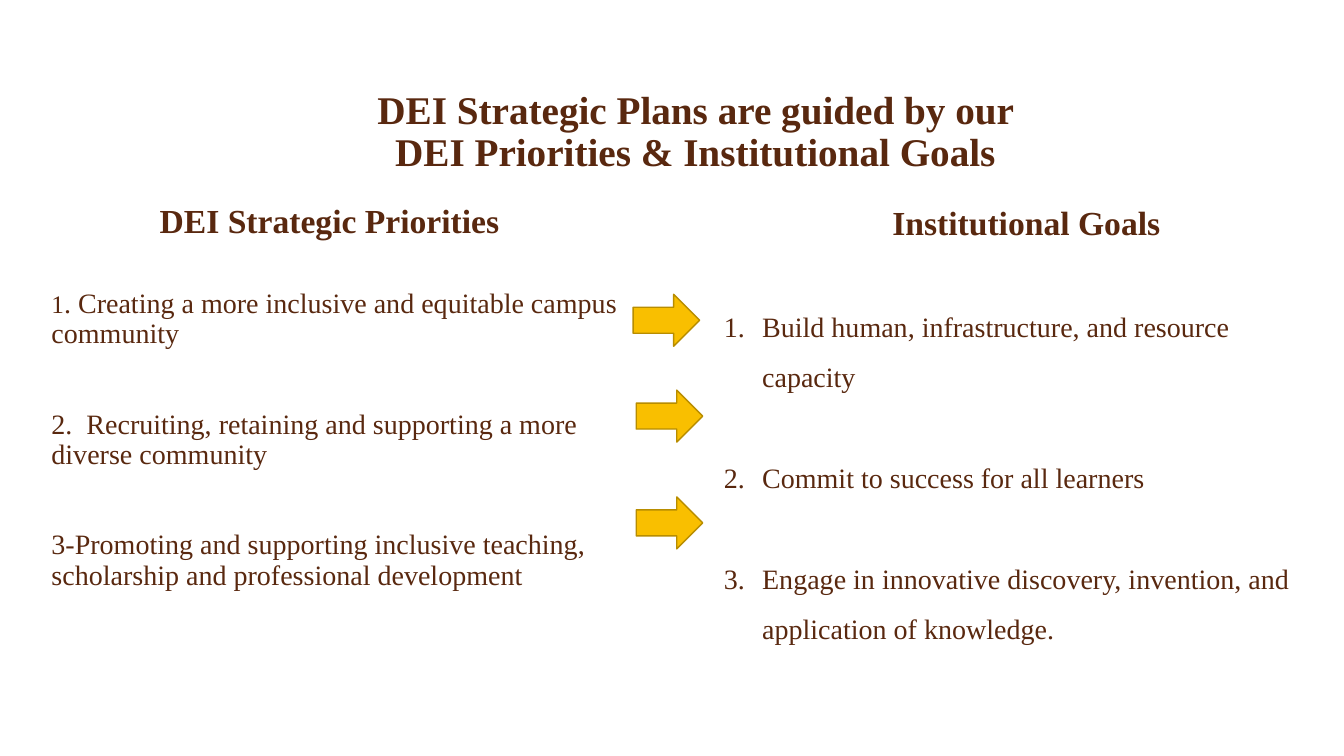
"""Build the slide that links DEI strategic priorities to institutional goals."""
from lxml.etree import SubElement
from pptx import Presentation
from pptx.dml.color import RGBColor
from pptx.enum.shapes import MSO_SHAPE as Shape
from pptx.enum.text import MSO_ANCHOR as Anchor, PP_ALIGN as Align
from pptx.oxml.ns import qn
from pptx.util import Inches, Pt

COLORS = {"text": "59280F", "arrow": "F9BF00", "arrow_edge": "B88D00"}
FONT = "Times New Roman"

presentation = Presentation()
presentation.slide_width = Inches(13.33)
presentation.slide_height = Inches(7.5)
slide = presentation.slides.add_slide(presentation.slide_layouts[6])


def place(left, top, width, height):
    """Turn percentages of the slide into a position and size."""
    across = presentation.slide_width / 100
    down = presentation.slide_height / 100
    return round(left * across), round(top * down), round(width * across), round(height * down)


def add_text(area, lines, size, bold=False, spacing=0.9, gap=0, bottom=0):
    """Add a text box; bold text is a centred heading that sits at the bottom."""
    frame = slide.shapes.add_textbox(*place(*area)).text_frame
    frame.word_wrap = True
    frame.margin_left = frame.margin_right = frame.margin_top = 0
    frame.margin_bottom = Inches(bottom)
    frame.vertical_anchor = Anchor.BOTTOM if bold else Anchor.TOP
    frame.text = "\n".join(lines)
    for index, paragraph in enumerate(frame.paragraphs):
        paragraph.alignment = Align.CENTER if bold else Align.LEFT
        paragraph.line_spacing = spacing
        paragraph.space_before = Pt(gap if index else 0)
        for run in paragraph.runs:
            run.font.name = FONT
            run.font.size = Pt(size)
            run.font.bold = bold
            run.font.color.rgb = RGBColor.from_string(COLORS["text"])
    return frame


title = "DEI Strategic Plans are guided by our \vDEI Priorities & Institutional Goals "
add_text((5.33, 7.2, 93.55, 16), [title], 28, bold=True)

headings = [
    (2.33, 5.87, "DEI Strategic Priorities "),
    (53.86, 6.13, "Institutional Goals"),
]
for left, height, heading in headings:
    add_text((left, 26.67, 45, height), [heading], 24, bold=True, bottom=0.05)

priorities = [
    "1. Creating a more inclusive and equitable campus community",
    "2.  Recruiting, retaining and supporting a more diverse community",
    "3-Promoting and supporting inclusive teaching, scholarship and professional development",
]
priority_frame = add_text((3.83, 38.27, 45, 49.33), priorities, 20, gap=43)
first_priority = priority_frame.paragraphs[0]
number = first_priority.runs[0]
number.text = priorities[0][:1]
number.font.size = Pt(18)
wording = first_priority.add_run()
wording.text = priorities[0][1:]
wording.font.name = FONT
wording.font.size = Pt(20)
wording.font.color.rgb = RGBColor.from_string(COLORS["text"])

goals = [
    "Build human, infrastructure, and resource capacity",
    "Commit to success for all learners",
    "Engage in innovative discovery, invention, and application of knowledge.",
]
goal_frame = add_text((53.86, 38.67, 45, 49.33), goals, 20, spacing=1.5, gap=36)
hanging = Inches(0.38)
for paragraph in goal_frame.paragraphs:
    properties = paragraph._p.get_or_add_pPr()
    properties.set("marL", str(hanging))
    properties.set("indent", str(-hanging))
    SubElement(properties, qn("a:buFont"), typeface="+mj-lt")
    SubElement(properties, qn("a:buAutoNum"), type="arabicPeriod")

for left, top in [(47.11, 38.93), (47.34, 51.6), (47.34, 65.73)]:
    arrow = slide.shapes.add_shape(Shape.RIGHT_ARROW, *place(left, top, 4.95, 6.87))
    arrow.shadow.inherit = False
    arrow.fill.solid()
    arrow.fill.fore_color.rgb = RGBColor.from_string(COLORS["arrow"])
    arrow.line.color.rgb = RGBColor.from_string(COLORS["arrow_edge"])
    arrow.line.width = Pt(1)

presentation.save("out.pptx")
